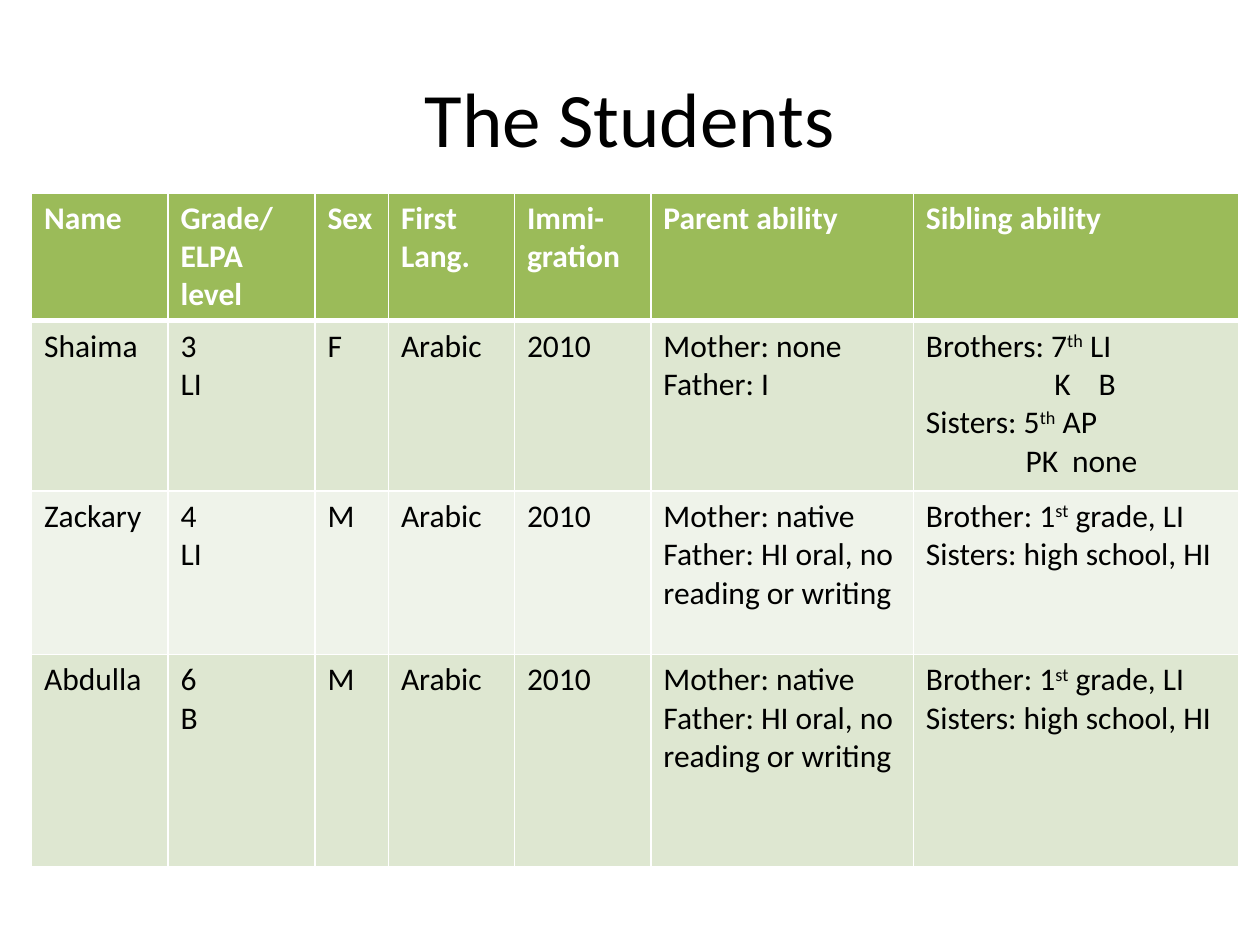
from dataclasses import dataclass
from pptx import Presentation, util as u
from pptx.dml.color import RGBColor
from pptx.enum import text
from pptx.oxml import parse_xml
from pptx.oxml.ns import nsdecls


@dataclass(frozen=True)
class Theme:
    """Colours, font and type sizes of the deck."""
    font: str = "Calibri"
    ink: str = "000000"
    paper: str = "FFFFFF"
    head: str = "9BBB59"
    bands: tuple = ("EFF3EA", "DEE7D1")
    title: int = 44
    body: int = 18
    thin: int = 1
    thick: int = 3


THEME = Theme()
WIDE, HIGH = u.Inches(10), u.Inches(7.5)
COLS = (13, 14, 7, 12, 13, 25, 31)
ROWS = (0.97, 1.35, 1.3, 1.68)
STOPS = {"K": (1.02, 1.37), "PK": (0.79, 1.16)}
ABLE = "Mother: native\nFather: HI oral, no reading or writing"
KIN = "Brother: 1^st^ grade, LI\nSisters: high school, HI"
DATA = (
    ("Name", "Grade/\nELPA level", "Sex", "First Lang.", "Immi-\ngration",
     "Parent ability", "Sibling ability"),
    ("Shaima", "3\nLI", "F", "Arabic", "2010", "Mother: none\nFather: I",
     "Brothers: 7^th^ LI\n\tK\tB\nSisters: 5^th^ AP\n\tPK\tnone"),
    ("Zackary", "4\nLI", "M", "Arabic", "2010", ABLE, KIN),
    ("Abdulla", "6\nB", "M", "Arabic", "2010", ABLE, KIN),
)


def style(run, size, tint, bold=False):
    """Set the font of a run."""
    font = run.font
    font.name, font.size, font.bold = THEME.font, u.Pt(size), bold
    font.color.rgb = RGBColor.from_string(tint)


def tabs(para, stops):
    """Give a paragraph left tab stops, in inches."""
    marks = "".join(f'<a:tab pos="{u.Inches(s)}" algn="l"/>' for s in stops)
    para._p.get_or_add_pPr().append(
        parse_xml(f'<a:tabLst {nsdecls("a")}>{marks}</a:tabLst>'))


def write(cell, words, tint, bold):
    """Fill a cell with lines, raising the parts between carets."""
    frame = cell.text_frame
    for i, line in enumerate(words.split("\n")):
        para = frame.add_paragraph() if i else frame.paragraphs[0]
        if line.startswith("\t"):
            tabs(para, STOPS[line.split("\t")[1]])
        for j, part in enumerate(line.split("^")):
            run = para.add_run()
            run.text = part
            style(run, THEME.body, tint, bold)
            if j % 2:
                run._r.get_or_add_rPr().set("baseline", "30000")


def edge(cell, row):
    """Draw the borders of a cell, with a thick rule below the header."""
    sides = {"L": THEME.thin, "R": THEME.thin,
             "T": THEME.thick if row == 1 else THEME.thin,
             "B": THEME.thick if row == 0 else THEME.thin}
    props = cell._tc.get_or_add_tcPr()
    for i, (side, size) in enumerate(sides.items()):
        props.insert(i, parse_xml(
            f'<a:ln{side} {nsdecls("a")} w="{u.Pt(size)}"><a:solidFill>'
            f'<a:srgbClr val="{THEME.paper}"/></a:solidFill></a:ln{side}>'))


def head(slide, box):
    """Place the title in its box."""
    shape = slide.shapes.title
    shape.left, shape.top, shape.width, shape.height = box
    frame = shape.text_frame
    frame.text = "The Students"
    frame.vertical_anchor = text.MSO_ANCHOR.MIDDLE
    para = frame.paragraphs[0]
    para.alignment = text.PP_ALIGN.CENTER
    style(para.runs[0], THEME.title, THEME.ink)


def roster(slide, box):
    """Place the student table, sharing its box among columns and rows."""
    grid = slide.shapes.add_table(len(ROWS), len(COLS), *box).table
    for col, part in zip(grid.columns, COLS):
        col.width = int(box[2] * part / sum(COLS))
    for row, part in zip(grid.rows, ROWS):
        row.height = int(box[3] * part / sum(ROWS))
    for r, line in enumerate(DATA):
        top = r == 0
        for c, words in enumerate(line):
            cell = grid.cell(r, c)
            cell.fill.solid()
            cell.fill.fore_color.rgb = RGBColor.from_string(
                THEME.head if top else THEME.bands[r % 2])
            write(cell, words, THEME.paper if top else THEME.ink, top)
            edge(cell, r)


def share(left, top, width, height):
    """Turn shares of the slide into a box."""
    return (int(WIDE * left), int(HIGH * top),
            int(WIDE * width), int(HIGH * height))


def main():
    """Build and save the deck."""
    deck = Presentation()
    deck.slide_width, deck.slide_height = WIDE, HIGH
    slide = deck.slides.add_slide(deck.slide_layouts[5])
    head(slide, share(0.05, 0.04, 0.9, 1 / 6))
    roster(slide, (u.Inches(0.25), u.Inches(1.53),
                   u.Inches(sum(COLS) / 12), u.Inches(sum(ROWS))))
    deck.save("out.pptx")


if __name__ == "__main__":
    main()
